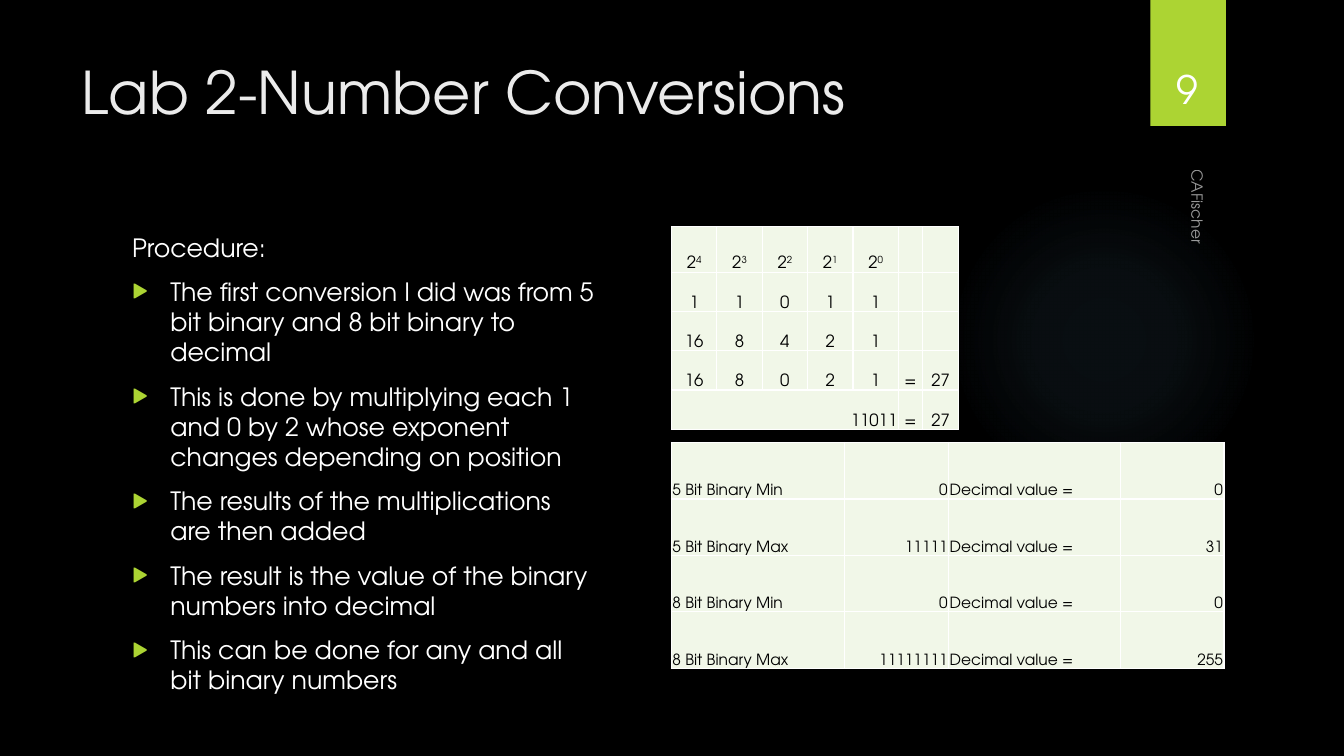
from lxml import etree
from pptx import Presentation
from pptx.dml.color import RGBColor
from pptx.enum.shapes import MSO_SHAPE
from pptx.enum.text import MSO_ANCHOR, MSO_AUTO_SIZE, PP_ALIGN
from pptx.oxml import parse_xml
from pptx.oxml.ns import qn
from pptx.util import Emu, Pt

PX = 9144
FONT = "TeX Gyre Adventor"
WHITE, BLACK, LIME, PALE, SKY = "FFFFFF", "000000", "ACD433", "F1F7E8", "7AC4F0"
LEFT, CENTER, RIGHT = PP_ALIGN.LEFT, PP_ALIGN.CENTER, PP_ALIGN.RIGHT
TOP, BOTTOM = MSO_ANCHOR.TOP, MSO_ANCHOR.BOTTOM
RECTANGLE, OVAL = MSO_SHAPE.RECTANGLE, MSO_SHAPE.OVAL
NO_AUTOFIT = MSO_AUTO_SIZE.NONE
DRAWING_NS = 'xmlns:a="http://schemas.openxmlformats.org/drawingml/2006/main"'

STEPS = [
    "The first conversion I did was from 5 bit binary and 8 bit binary to decimal",
    "This is done by multiplying each 1 and 0 by 2 whose exponent changes depending on position",
    "The results of the multiplications are then added",
    "The result is the value of the binary numbers into decimal",
    "This can be done for any and all bit binary numbers",
]
CONVERSION = [
    ["2^4", "2^3", "2^2", "2^1", "2^0", "", ""],
    ["1", "1", "0", "1", "1", "", ""],
    ["16", "8", "4", "2", "1", "", ""],
    ["16", "8", "0", "2", "1", "=", "27"],
    ["11011", "", "", "", "", "=", "27"],
]
RANGES = [
    [f"{label}", binary, "Decimal value =", value]
    for label, binary, value in [
        ("5 Bit Binary Min", "0", "0"),
        ("5 Bit Binary Max", "11111", "31"),
        ("8 Bit Binary Min", "0", "0"),
        ("8 Bit Binary Max", "11111111", "255"),
    ]
]


def px(*lengths):
    """Turn pixel lengths into EMU."""
    return [Emu(length * PX) for length in lengths]


def rgb(code):
    """Return the colour for a hex string."""
    return RGBColor.from_string(code)


def xml(markup):
    """Build a drawing element from markup whose root tag has no attributes."""
    return parse_xml(markup.replace(">", f" {DRAWING_NS}>", 1))


def write(paragraph, text, size, color=WHITE, align=LEFT, before=0, alpha=None):
    """Fill a paragraph with text, raising whatever follows a caret."""
    paragraph.alignment = align
    paragraph.space_before = Pt(before)
    base, _, exponent = text.partition("^")
    for part, raised in ((base, False), (exponent, True)):
        if not part:
            continue
        run = paragraph.add_run()
        run.text = part
        run.font.name, run.font.size = FONT, Pt(size)
        run.font.color.rgb = rgb(color)
        if raised:
            run.font._element.set("baseline", "30000")
        if alpha:
            tint = run.font._element.find(".//" + qn("a:srgbClr"))
            etree.SubElement(tint, qn("a:alpha"), val=str(alpha * 1000))


def place(placeholder, box):
    """Move a placeholder into a box and return its wrapped text frame."""
    placeholder.left, placeholder.top, placeholder.width, placeholder.height = px(*box)
    frame = placeholder.text_frame
    frame.word_wrap, frame.auto_size = True, NO_AUTOFIT
    frame.vertical_anchor = TOP
    return frame


def add_plain_shape(slide, kind, box):
    """Add a shape without outline or inherited shadow."""
    shape = slide.shapes.add_shape(kind, *px(*box))
    shape.shadow.inherit = False
    shape.line.fill.background()
    return shape


def add_glow(slide, box):
    """Draw the faint round glow."""
    glow = add_plain_shape(slide, OVAL, box)
    stops = "".join(
        f'<a:gs pos="{position * 1000}"><a:srgbClr val="{SKY}">'
        f'<a:alpha val="{alpha * 1000}"/></a:srgbClr></a:gs>'
        for position, alpha in ((0, 7), (36, 6), (69, 0))
    )
    gradient = xml(
        f'<a:gradFill><a:gsLst>{stops}</a:gsLst><a:path path="circle">'
        '<a:fillToRect l="50000" t="50000" r="50000" b="50000"/></a:path></a:gradFill>'
    )
    glow._element.spPr.find(qn("a:prstGeom")).addnext(gradient)


def add_label(slide, box, text, rotation=0, **style):
    """Add a one-line text box anchored at its bottom."""
    label = slide.shapes.add_textbox(*px(*box))
    label.rotation = rotation
    frame = label.text_frame
    frame.word_wrap, frame.vertical_anchor = True, BOTTOM
    write(frame.paragraphs[0], text, **style)


def add_page_tab(slide, box):
    """Draw the green tab with its soft shadow and the page number."""
    left, top, width, height = box
    tab = add_plain_shape(slide, RECTANGLE, box)
    tab.fill.solid()
    tab.fill.fore_color.rgb = rgb(LIME)
    tab._element.spPr.find(qn("a:effectLst")).append(xml(
        f'<a:outerShdw><a:srgbClr val="{BLACK}"><a:alpha val="45000"/></a:srgbClr></a:outerShdw>'
    ))
    shadow = tab._element.spPr.find(".//" + qn("a:outerShdw"))
    for key, value in (("blurRad", Pt(3)), ("dist", Pt(2)), ("dir", 90 * 60000)):
        shadow.set(key, str(int(value)))
    add_label(slide, (left - 9, top + 32, width + 17, height - 41), "9", size=28, align=CENTER)


def add_procedure(placeholder, box):
    """Write the lead-in and the bulleted steps."""
    frame = place(placeholder, box)
    for index, text in enumerate(["Procedure:"] + STEPS):
        paragraph = frame.add_paragraph() if index else frame.paragraphs[0]
        properties = paragraph._p.get_or_add_pPr()
        indent = 38 * PX if index else 0
        properties.set("marL", str(indent))
        properties.set("indent", str(-indent))
        if index:
            color = etree.SubElement(properties, qn("a:buClr"))
            etree.SubElement(color, qn("a:srgbClr"), val=LIME)
            etree.SubElement(properties, qn("a:buSzPct"), val="80000")
            etree.SubElement(properties, qn("a:buFont"), typeface=FONT)
            etree.SubElement(properties, qn("a:buChar"), char="▶")
        else:
            etree.SubElement(properties, qn("a:buNone"))
        write(paragraph, text, 18, before=10 if index else 0)


def style_cell(cell):
    """Give a cell its pale fill, tight margins and white borders."""
    cell.margin_left, cell.margin_right, cell.margin_top, cell.margin_bottom = px(1, 1, 1, 0)
    cell.vertical_anchor = BOTTOM
    properties = cell._tc.get_or_add_tcPr()
    for side in ("lnL", "lnR", "lnT", "lnB"):
        border = etree.SubElement(properties, qn(f"a:{side}"), w=str(Pt(1)))
        fill = etree.SubElement(border, qn("a:solidFill"))
        etree.SubElement(fill, qn("a:srgbClr"), val=WHITE)
    cell.fill.solid()
    cell.fill.fore_color.rgb = rgb(PALE)


def add_grid(slide, origin, widths, heights, values, aligns, size):
    """Add a table at a corner, with one alignment for each column."""
    box = (*origin, sum(widths), sum(heights))
    table = slide.shapes.add_table(len(heights), len(widths), *px(*box)).table
    table.first_row = table.horz_banding = False
    for column, width in zip(table.columns, px(*widths)):
        column.width = width
    for row, height, texts in zip(table.rows, px(*heights), values):
        row.height = height
        for cell, text, align in zip(row.cells, texts, aligns):
            style_cell(cell)
            write(cell.text_frame.paragraphs[0], text, size, color=BLACK, align=align)
    return table


def add_conversion(slide, origin):
    """Add the place-value table, whose last row starts with a merged cell."""
    table = add_grid(slide, origin, [45] * 5 + [24, 36], [45] + [39] * 4,
                     CONVERSION, [CENTER] * 7, 12)
    total = table.cell(4, 0)
    total.merge(table.cell(4, 4))
    total.text_frame.paragraphs[0].alignment = RIGHT


def build_slide(deck):
    """Compose the number conversion slide."""
    slide = deck.slides.add_slide(deck.slide_layouts[1])
    slide.background.fill.solid()
    slide.background.fill.fore_color.rgb = rgb(BLACK)
    title, procedure = slide.placeholders
    add_glow(slide, (941, 183, 308, 308))
    write(place(title, (71, 50, 1029, 153)).paragraphs[0],
          "Lab 2-Number Conversions", 42, color="EBEBEB")
    add_procedure(procedure, (121, 225, 481, 478))
    add_conversion(slide, (666, 225))
    add_grid(slide, (666, 439), [172, 103, 170, 103], [56] * 4,
             RANGES, [LEFT, RIGHT] * 2, 11)
    add_label(slide, (979, 353, 422, 33), "CAFischer", rotation=90, size=11, alpha=60)
    add_page_tab(slide, (1141, 0, 75, 125))


def main():
    """Build and save the deck."""
    deck = Presentation()
    deck.slide_width, deck.slide_height = px(1333, 750)
    build_slide(deck)
    deck.save("out.pptx")


if __name__ == "__main__":
    main()
